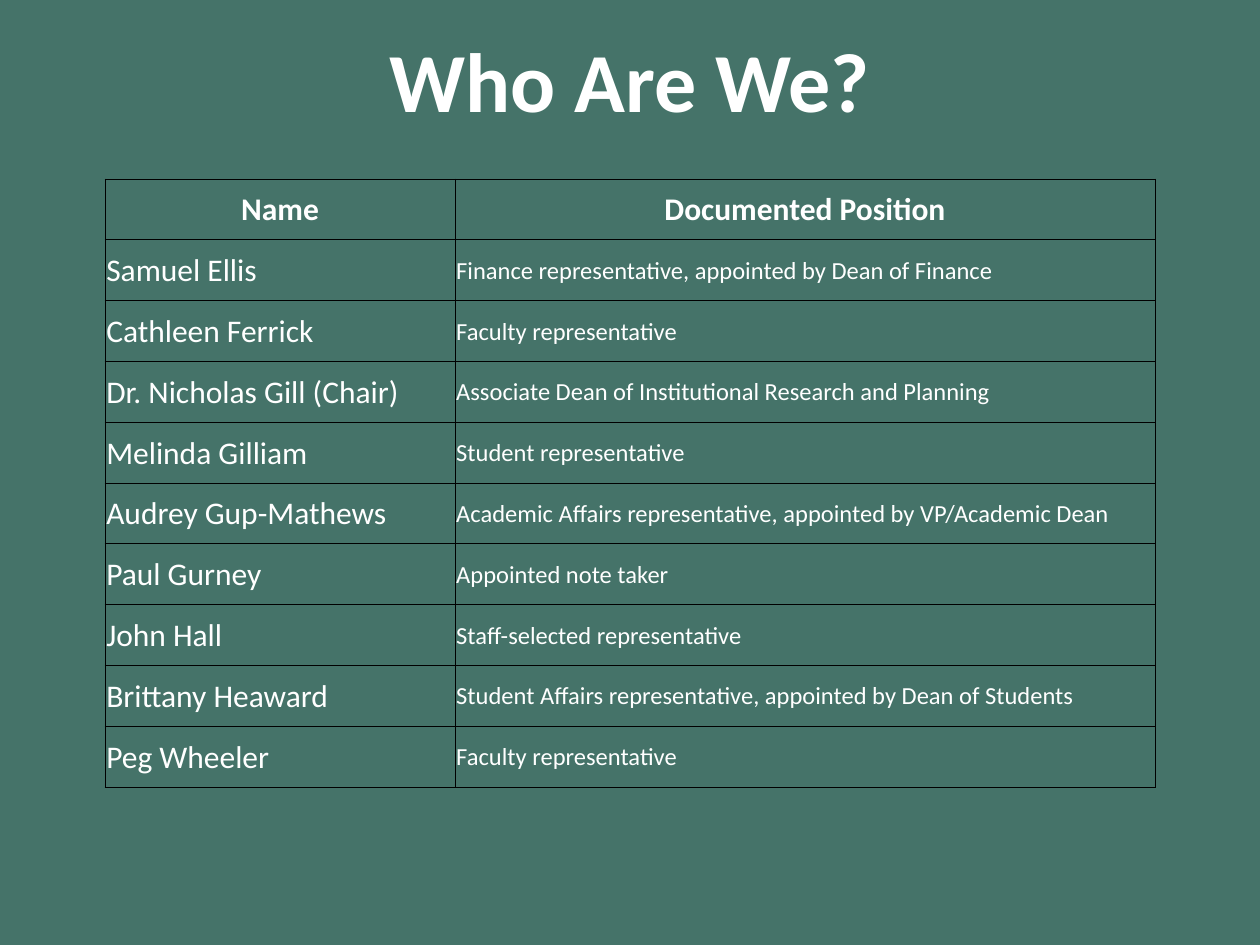
import lxml.etree
import pptx
import pptx.dml.color
import pptx.enum.text
import pptx.oxml.ns
import pptx.util

TITLE = "Who Are We?"
HEADER = ("Name", "Documented Position")
MEMBERS = [
    ("Samuel Ellis", "Finance representative, appointed by Dean of Finance"),
    ("Cathleen Ferrick", "Faculty representative"),
    ("Dr. Nicholas Gill (Chair)", "Associate Dean of Institutional Research and Planning"),
    ("Melinda Gilliam", "Student representative"),
    ("Audrey Gup-Mathews", "Academic Affairs representative, appointed by VP/Academic Dean"),
    ("Paul Gurney", "Appointed note taker"),
    ("John Hall", "Staff-selected representative"),
    ("Brittany Heaward", "Student Affairs representative, appointed by Dean of Students"),
    ("Peg Wheeler", "Faculty representative"),
]

GREEN = pptx.dml.color.RGBColor(0x45, 0x73, 0x69)
WHITE = pptx.dml.color.RGBColor(0xFF, 0xFF, 0xFF)
BLACK = pptx.dml.color.RGBColor(0x00, 0x00, 0x00)
FONT = "Calibri"
COLUMN_SHARES = (1 / 3, 2 / 3)
COLUMN_SIZES = (18, 14)
HEADER_SIZE = 18

Inches, Pt = pptx.util.Inches, pptx.util.Pt
ALIGN = pptx.enum.text.PP_ALIGN
MIDDLE = pptx.enum.text.MSO_ANCHOR.MIDDLE


def write(tf, text, size, bold=False, align=ALIGN.LEFT):
    tf.word_wrap = True
    p = tf.paragraphs[0]
    p.alignment = align
    r = p.add_run()
    r.text = text
    r.font.name, r.font.size, r.font.bold = FONT, Pt(size), bold
    r.font.color.rgb = WHITE


def add_borders(cell, color=BLACK, width=0.5):
    """Line all four sides; the lines must come before the fill in tcPr."""
    tc_pr = cell._tc.get_or_add_tcPr()
    for i, side in enumerate(("lnL", "lnR", "lnT", "lnB")):
        ln = lxml.etree.Element(pptx.oxml.ns.qn(f"a:{side}"), w=str(Pt(width)))
        fill = lxml.etree.SubElement(ln, pptx.oxml.ns.qn("a:solidFill"))
        lxml.etree.SubElement(fill, pptx.oxml.ns.qn("a:srgbClr"), val=str(color))
        tc_pr.insert(i, ln)


def add_title(s, width, height):
    box = s.shapes.add_textbox(
        int(width * 0.05), 0, int(width * 0.9), int(height / 6))
    box.text_frame.vertical_anchor = MIDDLE
    write(box.text_frame, TITLE, 48, bold=True, align=ALIGN.CENTER)


def add_members(s, width):
    rows = [HEADER] + MEMBERS
    table_width, row_height = int(width * 5 / 6), Inches(4.83) // len(rows)
    table = s.shapes.add_table(
        len(rows), len(HEADER), (width - table_width) // 2, Inches(1.42),
        table_width, row_height * len(rows)).table
    table.horz_banding = False
    for column, share in zip(table.columns, COLUMN_SHARES):
        column.width = int(table_width * share)
    for i, row in enumerate(rows):
        table.rows[i].height = row_height
        for j, text in enumerate(row):
            cell = table.cell(i, j)
            cell.fill.background()
            cell.vertical_anchor = MIDDLE
            cell.margin_left = cell.margin_right = cell.margin_top = Inches(0.01)
            cell.margin_bottom = 0
            add_borders(cell)
            if i == 0:
                write(cell.text_frame, text, HEADER_SIZE, bold=True, align=ALIGN.CENTER)
            else:
                write(cell.text_frame, text, COLUMN_SIZES[j])


def main():
    prs = pptx.Presentation()
    prs.slide_width, prs.slide_height = Inches(10), Inches(7.5)
    s = prs.slides.add_slide(prs.slide_layouts[6])
    s.background.fill.solid()
    s.background.fill.fore_color.rgb = GREEN
    add_title(s, prs.slide_width, prs.slide_height)
    add_members(s, prs.slide_width)
    prs.save("out.pptx")


if __name__ == "__main__":
    main()
